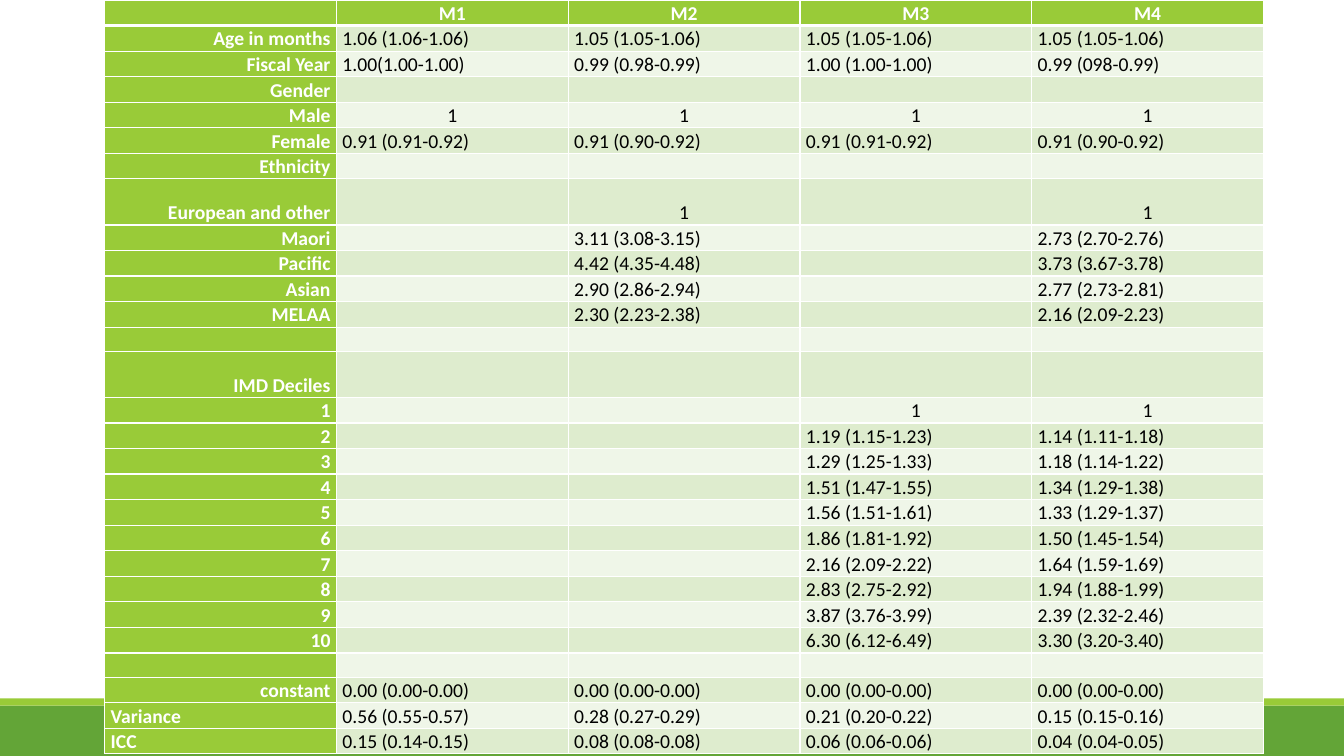
import dataclasses

import lxml.etree
import pptx
import pptx.dml.color
import pptx.enum.shapes
import pptx.enum.text
import pptx.oxml.ns
import pptx.util

Cm = pptx.util.Cm
Pt = pptx.util.Pt
Align = pptx.enum.text.PP_ALIGN
qn = pptx.oxml.ns.qn


@dataclasses.dataclass(frozen=True)
class Theme:
    font: str = "Calibri"
    size: int = 14
    line_spacing: float = 1.07
    space_after: int = 8
    dark_green: str = "63A537"
    green: str = "99CB38"
    bands: tuple = ("EFF6E8", "DEECCE")
    white: str = "FFFFFF"
    black: str = "000000"
    border: int = 1
    header_border: int = 3


HEADER = ("", "M1", "M2", "M3", "M4")
ROWS = [
    HEADER,
    ("Age in months", "1.06 (1.06-1.06)", "1.05 (1.05-1.06)", "1.05 (1.05-1.06)", "1.05 (1.05-1.06)"),
    ("Fiscal Year", "1.00(1.00-1.00)", "0.99 (0.98-0.99)", "1.00 (1.00-1.00)", "0.99 (098-0.99)"),
    ("Gender", "", "", "", ""),
    ("Male", "1", "1", "1", "1"),
    ("Female", "0.91 (0.91-0.92)", "0.91 (0.90-0.92)", "0.91 (0.91-0.92)", "0.91 (0.90-0.92)"),
    ("Ethnicity", "", "", "", ""),
    ("European and other", "", "1", "", "1"),
    ("Maori", "", "3.11 (3.08-3.15)", "", "2.73 (2.70-2.76)"),
    ("Pacific", "", "4.42 (4.35-4.48)", "", "3.73 (3.67-3.78)"),
    ("Asian", "", "2.90 (2.86-2.94)", "", "2.77 (2.73-2.81)"),
    ("MELAA", "", "2.30 (2.23-2.38)", "", "2.16 (2.09-2.23)"),
    ("", "", "", "", ""),
    ("IMD Deciles", "", "", "", ""),
    ("1", "", "", "1", "1"),
    ("2", "", "", "1.19 (1.15-1.23)", "1.14 (1.11-1.18)"),
    ("3", "", "", "1.29 (1.25-1.33)", "1.18 (1.14-1.22)"),
    ("4", "", "", "1.51 (1.47-1.55)", "1.34 (1.29-1.38)"),
    ("5", "", "", "1.56 (1.51-1.61)", "1.33 (1.29-1.37)"),
    ("6", "", "", "1.86 (1.81-1.92)", "1.50 (1.45-1.54)"),
    ("7", "", "", "2.16 (2.09-2.22)", "1.64 (1.59-1.69)"),
    ("8", "", "", "2.83 (2.75-2.92)", "1.94 (1.88-1.99)"),
    ("9", "", "", "3.87 (3.76-3.99)", "2.39 (2.32-2.46)"),
    ("10", "", "", "6.30 (6.12-6.49)", "3.30 (3.20-3.40)"),
    ("", "", "", "", ""),
    ("constant", "0.00 (0.00-0.00)", "0.00 (0.00-0.00)", "0.00 (0.00-0.00)", "0.00 (0.00-0.00)"),
    ("Variance", "0.56 (0.55-0.57)", "0.28 (0.27-0.29)", "0.21 (0.20-0.22)", "0.15 (0.15-0.16)"),
    ("ICC", "0.15 (0.14-0.15)", "0.08 (0.08-0.08)", "0.06 (0.06-0.06)", "0.04 (0.04-0.05)"),
]
TALL_ROWS = ("European and other", "IMD Deciles")
LEFT_LABELS = ("Variance", "ICC")


class SlideBuilder:
    def __init__(self, slide, theme):
        self.slide = slide
        self.theme = theme

    def color(self, value):
        return pptx.dml.color.RGBColor.from_string(value)

    def band(self, top, width, height, fill):
        shape = self.slide.shapes.add_shape(
            pptx.enum.shapes.MSO_SHAPE.RECTANGLE, 0, top, width, height)
        shape.shadow.inherit = False
        shape.fill.solid()
        shape.fill.fore_color.rgb = self.color(fill)
        shape.line.fill.background()

    def table(self, rows, left, top, column_width, row_height, tall_height):
        columns = len(rows[0])
        table = self.slide.shapes.add_table(
            len(rows), columns, left, top,
            column_width * columns, row_height * len(rows)).table
        table.horz_banding = False
        for column in table.columns:
            column.width = column_width
        for row_index, values in enumerate(rows):
            tall = values[0] in TALL_ROWS
            table.rows[row_index].height = tall_height if tall else row_height
            for column_index, value in enumerate(values):
                self.cell(table.cell(row_index, column_index), value, row_index, column_index)

    def cell(self, cell, value, row_index, column_index):
        theme = self.theme
        heading = row_index == 0 or column_index == 0
        cell.margin_left = cell.margin_right = Cm(0.15)
        cell.margin_top = cell.margin_bottom = 0
        cell.vertical_anchor = pptx.enum.text.MSO_ANCHOR.BOTTOM
        self.borders(cell, row_index)
        cell.fill.solid()
        cell.fill.fore_color.rgb = self.color(theme.green if heading else theme.bands[row_index % 2])

        cell.text_frame.text = value
        paragraph = cell.text_frame.paragraphs[0]
        paragraph.line_spacing = theme.line_spacing
        paragraph.space_after = Pt(theme.space_after)
        if row_index == 0 or value == "1" and not heading:
            paragraph.alignment = Align.CENTER
        elif heading and value not in LEFT_LABELS:
            paragraph.alignment = Align.RIGHT
        else:
            paragraph.alignment = Align.LEFT
        for run in paragraph.runs:
            run.font.name = theme.font
            run.font.size = Pt(theme.size)
            run.font.bold = heading
            run.font.color.rgb = self.color(theme.white if heading else theme.black)
        if not value:
            # Keeps an empty cell at the height of one text line
            lxml.etree.SubElement(paragraph._p, qn("a:endParaRPr"), sz=str(theme.size * 100))

    def borders(self, cell, row_index):
        theme = self.theme
        header_edge = {0: "a:lnB", 1: "a:lnT"}.get(row_index)
        properties = cell._tc.get_or_add_tcPr()
        for edge in ("a:lnL", "a:lnR", "a:lnT", "a:lnB"):
            width = theme.header_border if edge == header_edge else theme.border
            line = lxml.etree.SubElement(properties, qn(edge), w=str(Pt(width)))
            fill = lxml.etree.SubElement(line, qn("a:solidFill"))
            lxml.etree.SubElement(fill, qn("a:srgbClr"), val=theme.white)


def main():
    presentation = pptx.Presentation()
    presentation.slide_width = Cm(33.87)
    presentation.slide_height = Cm(19.05)
    theme = Theme()
    slide = presentation.slides.add_slide(presentation.slide_layouts[6])
    builder = SlideBuilder(slide, theme)

    # Footer bands
    width = presentation.slide_width
    builder.band(Cm(17.78), width, Cm(1.27), theme.dark_green)
    builder.band(Cm(17.6), width, Cm(0.18), theme.green)

    # Model results
    builder.table(ROWS, Cm(2.64), 0, Cm(5.84), Cm(0.61), Cm(1.16))

    presentation.save("out.pptx")


if __name__ == "__main__":
    main()
